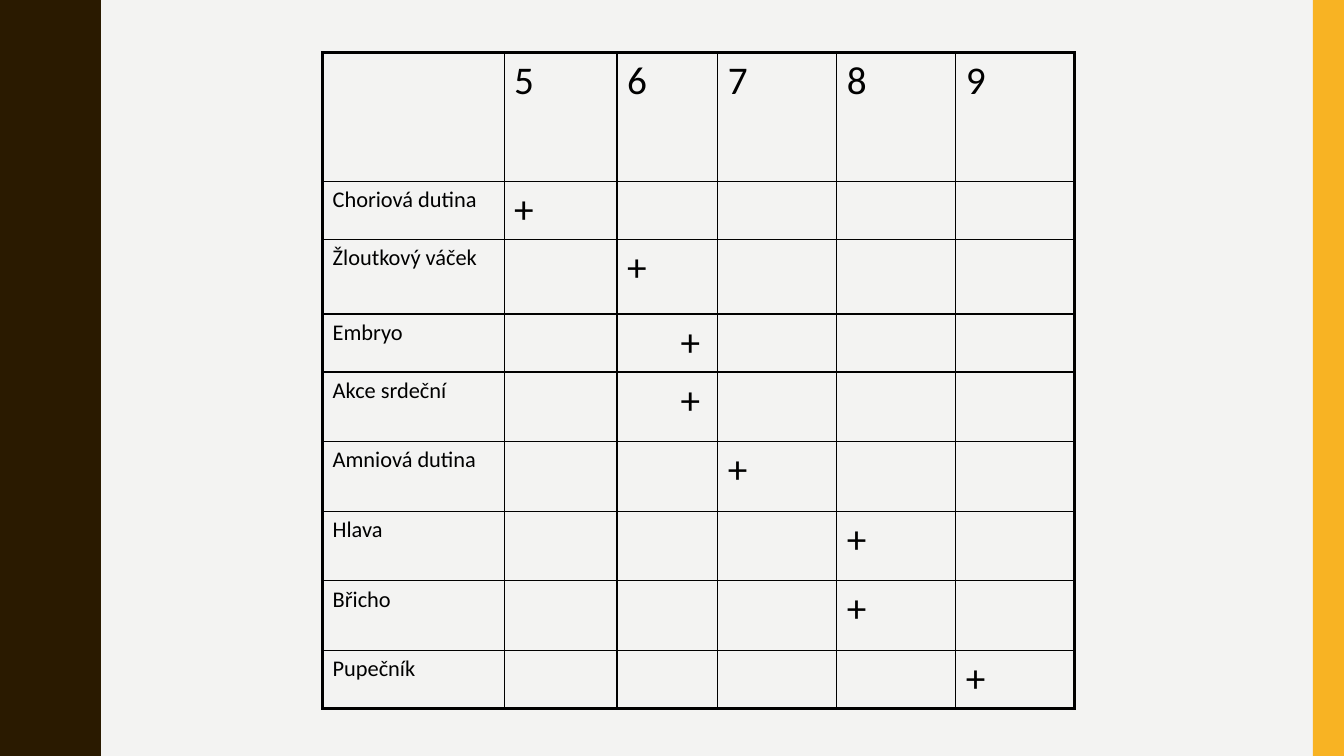
from pptx import Presentation
from pptx.dml.color import RGBColor
from pptx.enum.shapes import MSO_SHAPE
from pptx.oxml.ns import qn
from pptx.util import Inches, Pt
from lxml.etree import SubElement

WIDTH, HEIGHT = 13.33, 7.5
PAPER, BROWN, GOLD, BLACK = "F3F3F2", "2A1A00", "F8B323", "000000"

WEEKS = ["5", "6", "7", "8", "9"]
# Finding, week it shows, indent of its mark, row height
FINDINGS = [
    ("Choriová dutina", "5", 0, 0.57),
    ("Žloutkový váček", "6", 0, 0.74),
    ("Embryo", "6", 0.53, 0.57),
    ("Akce srdeční", "6", 0.53, 0.69),
    ("Amniová dutina", "7", 0, 0.69),
    ("Hlava", "8", 0, 0.69),
    ("Břicho", "8", 0, 0.69),
    ("Pupečník", "9", 0, 0.57),
]
TABLE_LEFT, TABLE_TOP = 3.2, 0.52
HEAD_HEIGHT = 1.28
COL_WIDTHS = [1.8, 1.12, 1, 1.18, 1.18, 1.18]
THIN, THICK = 1, 2.25

# One wave of the left edge: its first half, then the mirror of it
WAVE, WAVES = 1.5, 5
HALF = [
    (0.78, 0), (0.78, 0.07), (0.79, 0.14), (0.8, 0.2), (0.81, 0.25),
    (0.83, 0.29), (0.85, 0.33), (0.87, 0.38), (0.89, 0.42), (0.91, 0.46),
    (0.93, 0.5), (0.95, 0.55), (0.96, 0.61), (0.97, 0.68), (0.97, 0.75),
]


def color(code):
    return RGBColor.from_string(code)


def paint(shape, code):
    shape.fill.solid()
    shape.fill.fore_color.rgb = color(code)
    shape.line.fill.background()
    shape.shadow.inherit = False


def write(cell, text, size=28, indent=0):
    para = cell.text_frame.paragraphs[0]
    if indent:
        para._p.get_or_add_pPr().set("marL", str(Inches(indent)))
    run = para.add_run()
    run.text = text
    run.font.size = Pt(size)
    run.font.name = "Calibri"
    run.font.color.rgb = color(BLACK)


def border(cell, widths):
    """Draw the left, right, top and bottom borders, widths in points."""
    props = cell._tc.get_or_add_tcPr()
    for side, width in zip("LRTB", widths):
        line = SubElement(props, qn(f"a:ln{side}"), w=str(Pt(width)))
        fill = SubElement(line, qn("a:solidFill"))
        SubElement(fill, qn("a:srgbClr"), val=BLACK)


def add_wave(slide):
    wave = HALF + [(x, WAVE - y) for x, y in HALF[-2:0:-1]]
    edge = [(x, y + n * WAVE) for n in range(WAVES) for x, y in wave]
    edge += [(HALF[0][0], HEIGHT), (0, HEIGHT)]
    build = slide.shapes.build_freeform(0, 0, scale=Inches(1))
    build.add_line_segments(edge, close=True)
    paint(build.convert_to_shape(), BROWN)


def add_bar(slide):
    left = 13.02
    bar = slide.shapes.add_shape(
        MSO_SHAPE.RECTANGLE, Inches(left), 0,
        Inches(WIDTH - left), Inches(HEIGHT))
    paint(bar, GOLD)


def add_grid(slide):
    heights = [HEAD_HEIGHT] + [item[3] for item in FINDINGS]
    rows, cols = len(heights), len(COL_WIDTHS)
    table = slide.shapes.add_table(
        rows, cols, Inches(TABLE_LEFT), Inches(TABLE_TOP),
        Inches(sum(COL_WIDTHS)), Inches(sum(heights))).table
    table.first_row = table.horz_banding = False
    for col, width in zip(table.columns, COL_WIDTHS):
        col.width = Inches(width)
    for row, height in zip(table.rows, heights):
        row.height = Inches(height)

    for r in range(rows):
        for c in range(cols):
            outer = (c == 0, c == cols - 1, r == 0, r == rows - 1)
            cell = table.cell(r, c)
            border(cell, [THICK if out else THIN for out in outer])
            cell.fill.background()

    for c, week in enumerate(WEEKS, 1):
        write(table.cell(0, c), week)
    for r, (name, week, indent, _) in enumerate(FINDINGS, 1):
        write(table.cell(r, 0), name, size=16)
        write(table.cell(r, WEEKS.index(week) + 1), "+", indent=indent)


def main():
    deck = Presentation()
    deck.slide_width, deck.slide_height = Inches(WIDTH), Inches(HEIGHT)
    slide = deck.slides.add_slide(deck.slide_layouts[6])
    slide.background.fill.solid()
    slide.background.fill.fore_color.rgb = color(PAPER)
    add_wave(slide)
    add_bar(slide)
    add_grid(slide)
    deck.save("out.pptx")


if __name__ == "__main__":
    main()
